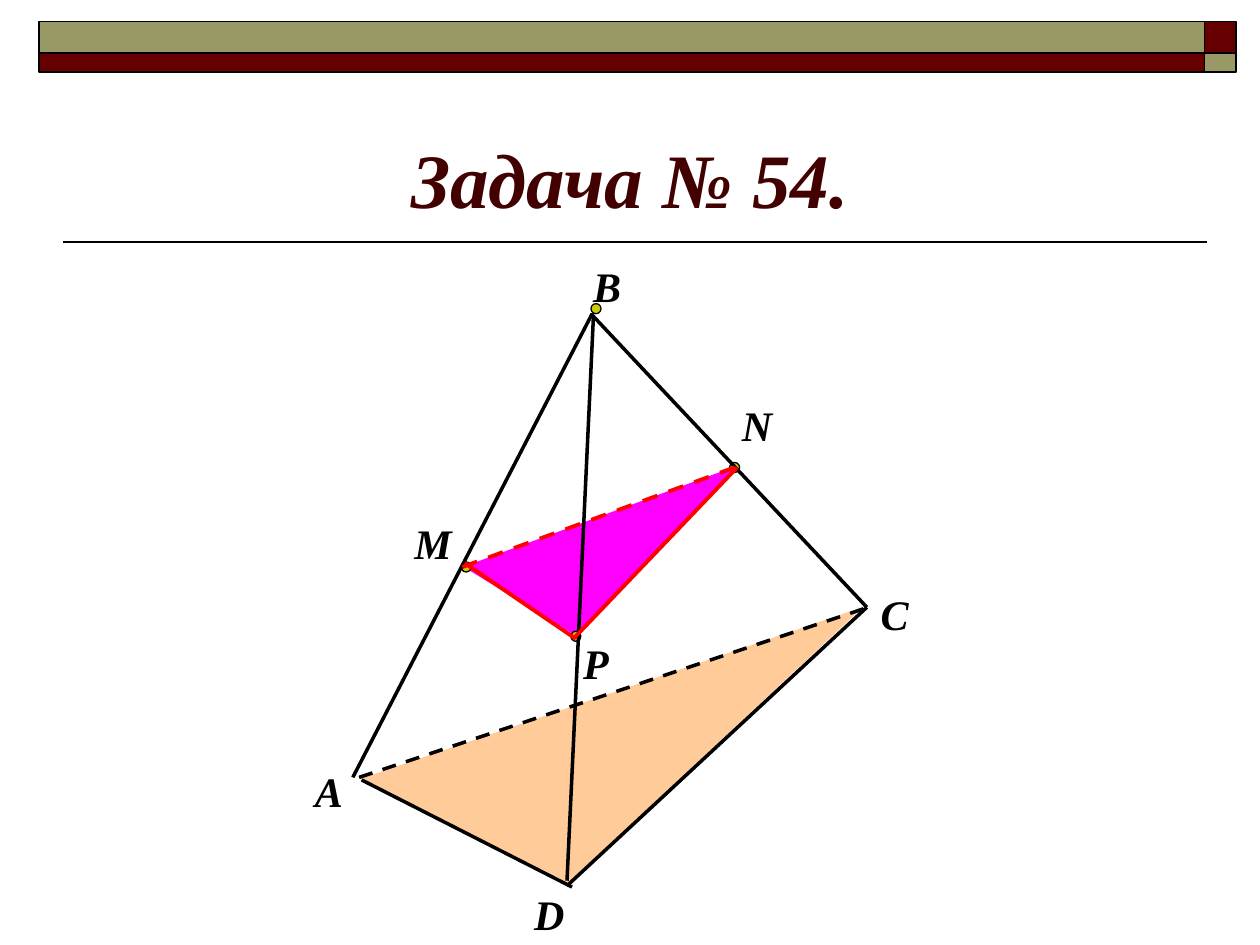
from pptx import Presentation
from pptx.dml.color import RGBColor
from pptx.enum.dml import MSO_LINE
from pptx.enum.shapes import MSO_CONNECTOR, MSO_SHAPE
from pptx.enum.text import MSO_ANCHOR, MSO_AUTO_SIZE, PP_ALIGN
from pptx.oxml.ns import qn
from pptx.util import Pt
from lxml.etree import SubElement

PX = 9144


def color(form, tint):
    form.rgb = RGBColor.from_string(tint)


def style(frame, size, tint):
    font = frame.paragraphs[0].runs[0].font
    font.name = "Times New Roman"
    font.size = Pt(size)
    font.bold = font.italic = True
    color(font.color, tint)


deck = Presentation()
deck.slide_width = 1000 * PX
deck.slide_height = 750 * PX
slide = deck.slides.add_slide(deck.slide_layouts[5])
shapes = slide.shapes

title = shapes.title
title.left, title.top, title.width, title.height = [n * PX for n in (50, 58, 900, 125)]
frame = title.text_frame
frame.text = "Задача № 54."
frame.word_wrap = True
frame.auto_size = MSO_AUTO_SIZE.NONE
frame.vertical_anchor = MSO_ANCHOR.BOTTOM
frame.paragraphs[0].alignment = PP_ALIGN.CENTER
style(frame, 44, "420000")

wine, olive = "660000", "999966"
bars = [
    (956, 17, 25, 25, wine),
    (31, 17, 925, 25, olive),
    (31, 42, 925, 15, wine),
    (956, 42, 25, 15, olive),
]
for x, y, w, h, tint in bars:
    bar = shapes.add_shape(MSO_SHAPE.RECTANGLE, x * PX, y * PX, w * PX, h * PX)
    bar.shadow.inherit = False
    bar.fill.solid()
    color(bar.fill.fore_color, tint)
    color(bar.line.color, "000000")
    bar.line.width = Pt(1)

faces = [
    ([(369, 450), (457, 504), (583, 371)], "FF00FF"),
    ([(288, 618), (451, 700), (683, 483)], "FFCC99"),
]
for points, tint in faces:
    path = shapes.build_freeform(*points[0], scale=PX)
    path.add_line_segments(points[1:], close=True)
    face = path.convert_to_shape()
    face.shadow.inherit = False
    face.fill.solid()
    color(face.fill.fore_color, tint)
    color(face.line.color, tint)
    face.line.width = Pt(0.75)

for x, y in [(469, 241), (366, 446), (579, 367), (453, 501)]:
    dot = shapes.add_shape(MSO_SHAPE.OVAL, x * PX, y * PX, 8 * PX, 8 * PX)
    dot.shadow.inherit = False
    dot.fill.solid()
    color(dot.fill.fore_color, "CCCC00")
    color(dot.line.color, "000000")
    dot.line.width = Pt(0.75)

edges = [
    (50, 192, 958, 192, "000000", 1, False),
    (285, 617, 686, 483, "000000", 2, True),
    (450, 703, 688, 482, "000000", 2, False),
    (688, 482, 469, 249, "000000", 2, False),
    (450, 699, 471, 251, "000000", 2, False),
    (280, 617, 470, 249, "000000", 2, False),
    (287, 619, 454, 704, "000000", 2, False),
    (369, 447, 457, 507, "FF0000", 2.25, False),
    (367, 450, 583, 371, "FF0000", 2.25, True),
    (456, 506, 585, 371, "FF0000", 2.25, False),
]
for x, y, u, v, tint, width, hidden in edges:
    edge = shapes.add_connector(MSO_CONNECTOR.STRAIGHT, x * PX, y * PX, u * PX, v * PX)
    SubElement(edge._element.spPr, qn("a:effectLst"))
    color(edge.line.color, tint)
    edge.line.width = Pt(width)
    if hidden:
        edge.line.dash_style = MSO_LINE.DASH

labels = [
    ("М", 319, 406, 50),
    ("Р", 453, 501, 40),
    ("N", 579, 312, 42),
    ("А", 240, 603, 42),
    ("D", 414, 700, 45),
    ("C", 689, 462, 42),
    ("В", 461, 202, 42),
]
for text, x, y, w in labels:
    label = shapes.add_textbox(x * PX, y * PX, w * PX, 50 * PX)
    frame = label.text_frame
    frame.text = text
    frame.word_wrap = False
    frame.auto_size = MSO_AUTO_SIZE.SHAPE_TO_FIT_TEXT
    style(frame, 24, "000000")

deck.save("out.pptx")
